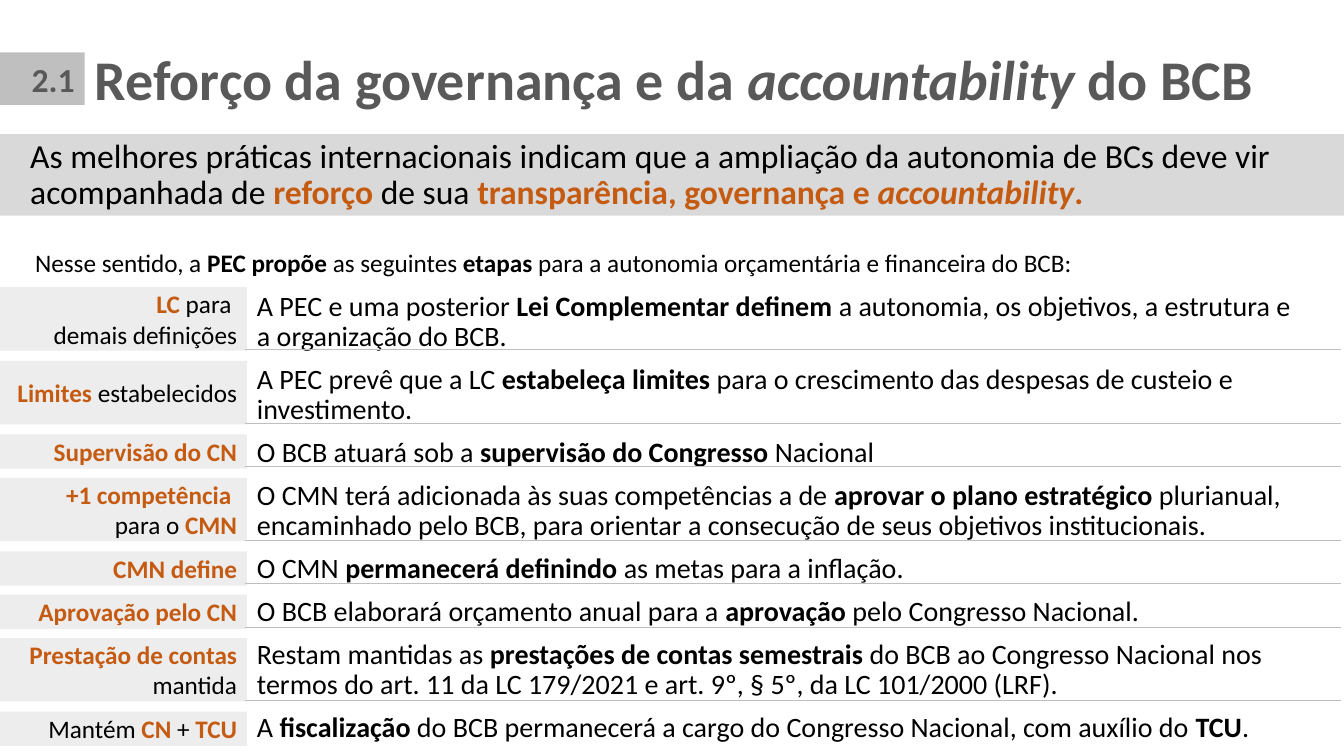
"""Build the slide on governance and accountability of the BCB."""
import dataclasses

import lxml.etree
import pptx
import pptx.dml.color
import pptx.enum.shapes
import pptx.enum.text
import pptx.oxml.ns
import pptx.util

Inches = pptx.util.Inches
Pt = pptx.util.Pt
Align = pptx.enum.text.PP_ALIGN
Anchor = pptx.enum.text.MSO_ANCHOR
color = pptx.dml.color.RGBColor.from_string


@dataclasses.dataclass(frozen=True)
class Theme:
    font: str = "Calibri"
    text: str = "000000"
    heading: str = "595959"
    accent: str = "C55A11"
    number_fill: str = "BFBFBF"
    band_fill: str = "D9D9D9"
    label_fill: str = "EDEDED"
    rule: str = "BFBFBF"
    title_size: int = 40
    lead_size: int = 24
    body_size: int = 20
    label_size: int = 18


theme = Theme()


def add_box(left, top, width, height, fill=None, anchor=Anchor.TOP):
    """Add a text box, or a rectangle when a fill is given, and return its text frame."""
    place = [Inches(value) for value in (left, top, width, height)]
    if fill:
        shape = slide.shapes.add_shape(pptx.enum.shapes.MSO_SHAPE.RECTANGLE, *place)
        shape.shadow.inherit = False
        shape.fill.solid()
        shape.fill.fore_color.rgb = color(fill)
        shape.line.fill.background()
    else:
        shape = slide.shapes.add_textbox(*place)
    shape.text_frame.word_wrap = True
    shape.text_frame.vertical_anchor = anchor
    return shape.text_frame


def write(paragraph, runs, size, base=theme.text, align=Align.LEFT, spacing=1.0):
    """Fill a paragraph with (text, style) runs: b is bold, i italic, a accent colour."""
    paragraph.alignment = align
    paragraph.line_spacing = spacing
    for text, style in runs:
        run = paragraph.add_run()
        run.text = text
        run.font.name = theme.font
        run.font.size = Pt(size)
        run.font.bold = "b" in style
        run.font.italic = "i" in style
        run.font.color.rgb = color(theme.accent if "a" in style else base)


steps = [
    (2, [[("LC ", "ab"), ("para ", "")], [("demais definições", "")]],
     [("A PEC e uma posterior ", ""), ("Lei Complementar definem ", "b"),
      ("a autonomia, os objetivos, a estrutura e a organização do BCB.", "")]),
    (2, [[("Limites ", "ab"), ("estabelecidos", "")]],
     [("A PEC prevê que a LC ", ""), ("estabeleça limites ", "b"),
      ("para o crescimento das despesas de custeio e investimento.", "")]),
    (1, [[("Supervisão do CN", "ab")]],
     [("O BCB atuará sob a ", ""), ("supervisão do Congresso ", "b"), ("Nacional", "")]),
    (2, [[("+1 competência ", "ab")], [("para o", ""), (" CMN", "ab")]],
     [("O CMN terá adicionada às suas competências a de ", ""),
      ("aprovar o plano estratégico ", "b"),
      ("plurianual, encaminhado pelo BCB, para orientar a consecução de seus "
       "objetivos institucionais.", "")]),
    (1, [[("CMN define", "ab")]],
     [("O CMN ", ""), ("permanecerá definindo ", "b"), ("as metas para a inflação.", "")]),
    (1, [[("Aprovação pelo CN", "ab")]],
     [("O BCB elaborará orçamento anual para a ", ""), ("aprovação", "b"),
      (" pelo Congresso Nacional.", "")]),
    (2, [[("Prestação de contas ", "ab"), ("mantida", "")]],
     [("Restam mantidas as ", ""), ("prestações de contas semestrais ", "b"),
      ("do BCB ao Congresso Nacional nos termos do art. 11 da LC 179/2021 e "
       "art. 9º, § 5º, da LC 101/2000 (LRF).", "")]),
    (1, [[("Mantém ", ""), ("CN ", "ab"), ("+", ""), (" TCU", "ab")]],
     [("A ", ""), ("fiscalização", "b"),
      (" do BCB permanecerá a cargo do Congresso Nacional, com auxílio do ", ""),
      ("TCU", "b"), (".", "")]),
]

presentation = pptx.Presentation()
presentation.slide_width = Inches(13.33)
presentation.slide_height = Inches(7.5)
slide = presentation.slides.add_slide(presentation.slide_layouts[6])

title = add_box(0.84, 0.36, 12.5, 0.81, anchor=Anchor.BOTTOM)
write(title.paragraphs[0],
      [("Reforço da governança e da ", "b"), ("accountability ", "bi"), ("do BCB", "b")],
      theme.title_size, theme.heading, spacing=0.9)

number = add_box(0, 0.52, 0.84, 0.52, theme.number_fill, Anchor.MIDDLE)
write(number.paragraphs[0], [("2.1", "b")], theme.lead_size, theme.heading, Align.RIGHT)

lead = add_box(0, 1.33, 13.33, 0.81, theme.band_fill)
lead.margin_left = Inches(0.3)
write(lead.paragraphs[0],
      [("As melhores práticas internacionais indicam que a ampliação da autonomia "
        "de BCs deve vir acompanhada de ", ""),
       ("reforço", "ab"), (" de sua ", ""), ("transparência, governança e ", "ab"),
       ("accountability", "abi"), (".", "ab")],
      theme.lead_size, spacing=0.9)

intro = add_box(0.25, 2.4, 11.2, 0.4)
write(intro.paragraphs[0],
      [("Nesse sentido, a ", ""), ("PEC propõe ", "b"), ("as seguintes ", ""),
       ("etapas", "b"), (" para a autonomia orçamentária e financeira do BCB:", "")],
      theme.label_size)

body = add_box(2.45, 2.85, 10.52, 4.65)
label_heights = {1: 0.34, 2: 0.63}
row_pitches = {1: 0.43, 2: 0.73}
top = 2.85
for index, (line_count, label_lines, description) in enumerate(steps):
    label = add_box(0, top, 2.45, label_heights[line_count], theme.label_fill, Anchor.MIDDLE)
    for position, runs in enumerate(label_lines):
        paragraph = label.add_paragraph() if position else label.paragraphs[0]
        write(paragraph, runs, theme.label_size, align=Align.RIGHT)

    paragraph = body.add_paragraph() if index else body.paragraphs[0]
    write(paragraph, description, theme.body_size, spacing=0.9)
    paragraph.space_before = Pt(5 if index else 0)
    paragraph.space_after = Pt(4)

    top += row_pitches[line_count]
    if index < len(steps) - 1:
        rule_top = Inches(top - 0.11)
        rule = slide.shapes.add_connector(
            pptx.enum.shapes.MSO_CONNECTOR.STRAIGHT,
            Inches(2.43), rule_top, Inches(13.3), rule_top)
        rule.line.color.rgb = color(theme.rule)
        rule.line.width = Pt(0.5)
        lxml.etree.SubElement(rule._element.spPr, pptx.oxml.ns.qn("a:effectLst"))

presentation.save("out.pptx")
